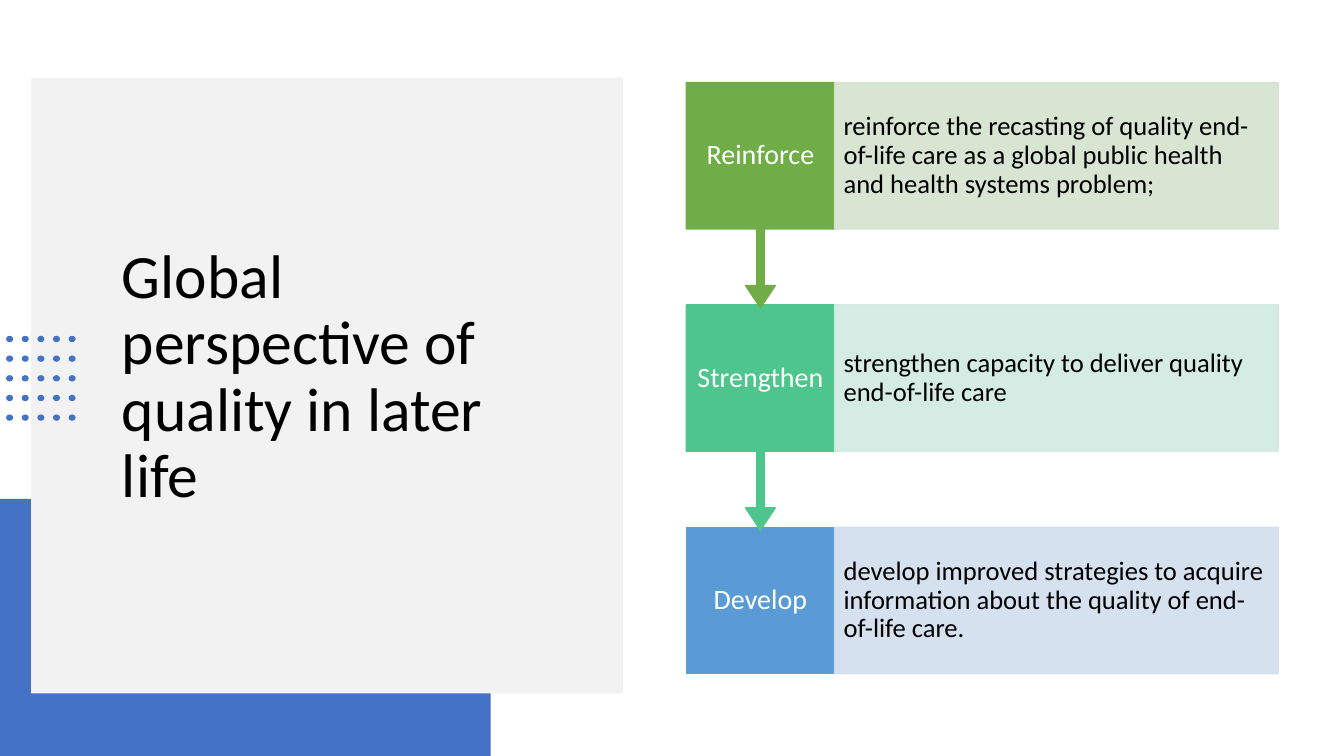
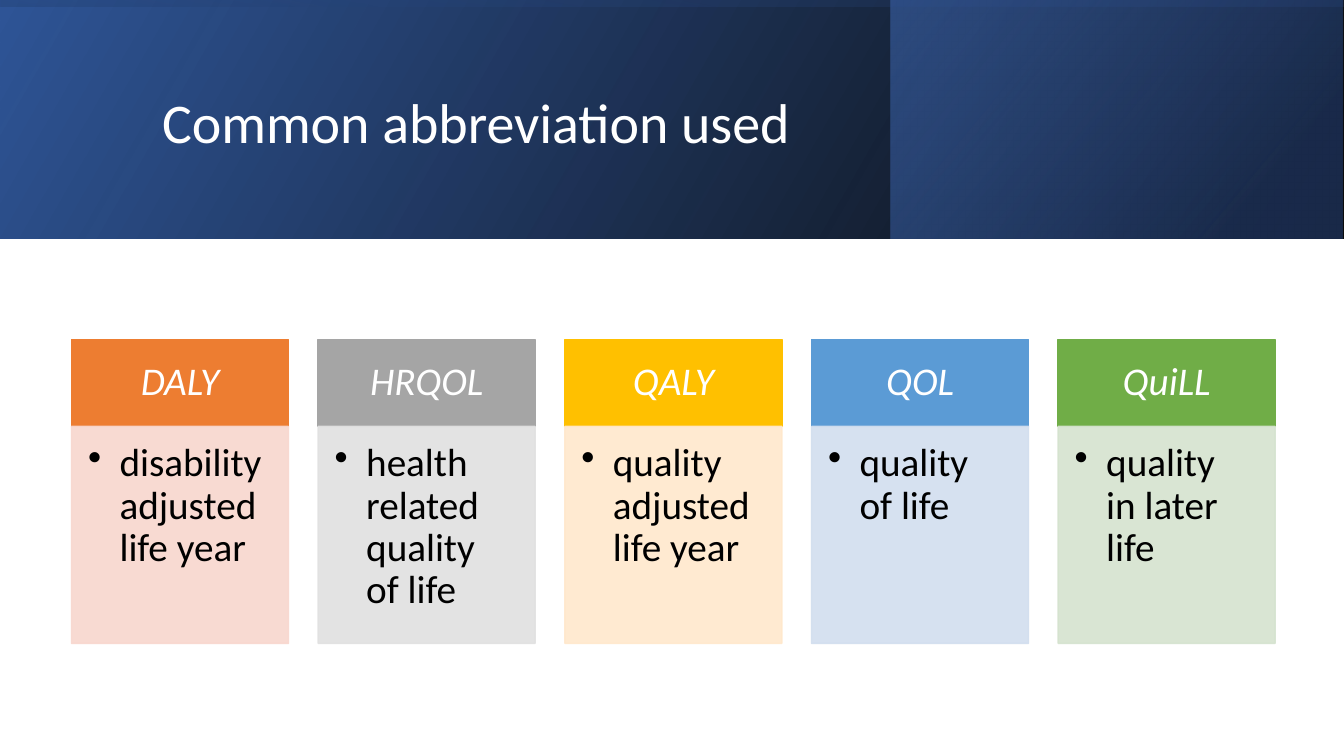
from dataclasses import dataclass

from lxml import etree
from pptx import Presentation
from pptx.dml.color import RGBColor
from pptx.enum import shapes, text
from pptx.oxml.ns import qn
from pptx.util import Pt


@dataclass(frozen=True)
class Theme:
    font: str = "Calibri"
    black: str = "000000"
    white: str = "FFFFFF"
    panel: str = "F2F2F2"
    accent: str = "4472C4"
    navy: str = "203864"
    royal: str = "2F5597"
    orange: str = "ED7D31"
    orange_tint: str = "F8D7CE"
    gray: str = "A5A5A5"
    gray_tint: str = "E1E1E1"
    gold: str = "FFC000"
    gold_tint: str = "FFE8CC"
    blue: str = "5B9BD5"
    blue_tint: str = "D2DEEF"
    green: str = "70AD47"
    green_tint: str = "D5E3CF"
    mint: str = "4DC58D"
    mint_tint: str = "D0EAE1"
    side_title: int = 44
    band_title: int = 40
    card: int = 28
    step_label: int = 20
    step_detail: int = 19
    tint_opacity: int = 90


theme = Theme()
kinds = shapes.MSO_SHAPE
middle, top = text.MSO_ANCHOR.MIDDLE, text.MSO_ANCHOR.TOP
left, center = text.PP_ALIGN.LEFT, text.PP_ALIGN.CENTER


def add_block(page, kind, frame, colors, opacities=(), outlined=False):
    """Add a shape; two (position, colour) stops in colors make a gradient."""
    shape = page.shapes.add_shape(kind, *map(Pt, frame))
    shape.shadow.inherit = False
    if isinstance(colors, str):
        shape.fill.solid()
        shape.fill.fore_color.rgb = RGBColor.from_string(colors)
    else:
        shape.fill.gradient()
        for stop, (position, color) in zip(shape.fill.gradient_stops, colors):
            stop.position = position
            stop.color.rgb = RGBColor.from_string(color)
    if outlined:
        shape.line.width = Pt(1)
        shape.line.color.rgb = RGBColor.from_string(colors)
    else:
        shape.line.fill.background()
    for color, opacity in zip(shape._element.spPr.iter(qn("a:srgbClr")), opacities):
        etree.SubElement(color, qn("a:alpha"), val=str(opacity * 1000))
    return shape


def write(box, words, size, color, align=left, anchor=middle, insets=(7.2, 3.6, 7.2, 3.6)):
    frame = box.text_frame
    frame.word_wrap = True
    frame.vertical_anchor = anchor
    frame.margin_left, frame.margin_top, frame.margin_right, frame.margin_bottom = map(Pt, insets)
    para = frame.paragraphs[0]
    para.text = words
    para.alignment = align
    para.line_spacing = 0.9
    para.font.name = theme.font
    para.font.size = Pt(size)
    para.font.color.rgb = RGBColor.from_string(color)
    return para


deck = Presentation()
deck.slide_width, deck.slide_height = Pt(960), Pt(540)
blank = deck.slide_layouts[6]
tint_opacities = (theme.tint_opacity, theme.tint_opacity)  # fill and outline

# Slide 1: title panel and three linked steps
page = deck.slides.add_slide(blank)
add_block(page, kinds.RECTANGLE, (0, 356.4, 350.4, 183.6), theme.accent)
add_block(page, kinds.RECTANGLE, (22.3, 55.4, 422.6, 440), theme.panel)
title = page.shapes.add_textbox(Pt(80), Pt(106), Pt(320), Pt(328))
write(title, "Global perspective of quality in later life", theme.side_title, theme.black)

for column in range(5):
    for row in range(5):
        dot = (4.4 + 11.16 * column, 239.9 + 14.04 * row, 5, 4.5)
        add_block(page, kinds.OVAL, dot, theme.accent)

steps = [
    ("Reinforce", theme.green, theme.green_tint,
     "reinforce the recasting of quality end-of-life care as a global public health "
     "and health systems problem;"),
    ("Strengthen", theme.mint, theme.mint_tint,
     "strengthen capacity to deliver quality end-of-life care"),
    ("Develop", theme.blue, theme.blue_tint,
     "develop improved strategies to acquire information about the quality of "
     "end-of-life care."),
]
step_left, step_top, step_pitch = 490.3, 59, 158.8
label_width, label_height, callout_height, detail_width = 105.8, 104.6, 160.9, 317
last = len(steps) - 1
# Bottom step first, so that each arrow tip lies over the next label
for index, (label, color, tint, detail) in reversed(list(enumerate(steps))):
    y = step_top + step_pitch * index
    kind = kinds.RECTANGLE if index == last else kinds.DOWN_ARROW_CALLOUT
    height = label_height if index == last else callout_height
    box = add_block(page, kind, (step_left, y, label_width, height), color, outlined=True)
    if index < last:
        for position, ratio in enumerate((0.05, 0.1, 0.15, 0.65)):
            box.adjustments[position] = ratio
    write(box, label, theme.step_label, theme.white, center, insets=(4, 8, 4, 8))
    box = add_block(page, kinds.RECTANGLE,
                    (step_left + label_width, y, detail_width, label_height),
                    tint, tint_opacities, outlined=True)
    write(box, detail, theme.step_detail, theme.black, insets=(6.5, 8, 6.5, 8))

# Slide 2: gradient band and five abbreviation cards
page = deck.slides.add_slide(blank)
band_height = 170.6
band_layers = [
    ((0, 0, 960, band_height), 0, 330,
     ((0, theme.black), (1, theme.royal)), (96, 100)),
    ((636.5, 0, 322.6, band_height), 0, 320,
     ((0.19, theme.navy), (1, theme.accent)), (68, 48)),
    ((394.7, -394.7, band_height, 960), 270, 350,
     ((0.23, theme.royal), (0.99, theme.black)), (16, 45)),
]
for frame, rotation, angle, stops, opacities in band_layers:
    layer = add_block(page, kinds.RECTANGLE, frame, stops, opacities)
    layer.fill.gradient_angle = 360 - angle
    layer.rotation = rotation
    layer._element.spPr.find(qn("a:xfrm")).set("flipH", "1")
title = page.shapes.add_textbox(Pt(108.7), Pt(27.4), Pt(765.4), Pt(123.8))
write(title, "Common abbreviation used", theme.band_title, theme.white)

cards = [
    ("DALY", "disability adjusted life year", theme.orange, theme.orange_tint),
    ("HRQOL", "health related quality of life", theme.gray, theme.gray_tint),
    ("QALY", "quality adjusted life year", theme.gold, theme.gold_tint),
    ("QOL", "quality of life", theme.blue, theme.blue_tint),
    ("QuiLL", "quality in later life", theme.green, theme.green_tint),
]
card_left, card_top, card_pitch = 51.1, 242.6, 176.2
card_width, head_height, body_height = 155, 62, 155
bullet_indent = Pt(22.5)
for index, (term, meaning, color, tint) in enumerate(cards):
    x = card_left + card_pitch * index
    head = add_block(page, kinds.RECTANGLE, (x, card_top, card_width, head_height),
                     color, outlined=True)
    para = write(head, term, theme.card, theme.white, center, insets=(15.7, 9, 15.7, 9))
    para.font.italic = True
    body = add_block(page, kinds.RECTANGLE,
                     (x, card_top + head_height, card_width, body_height),
                     tint, tint_opacities, outlined=True)
    para = write(body, meaning, theme.card, theme.black, anchor=top,
                 insets=(11.8, 11.8, 15.7, 17.6))
    properties = para._p.get_or_add_pPr()
    properties.set("marL", str(bullet_indent))
    properties.set("indent", str(-bullet_indent))
    bullet = etree.Element(qn("a:buChar"), char="•")
    properties.find(qn("a:lnSpc")).addnext(bullet)

deck.save("out.pptx")
